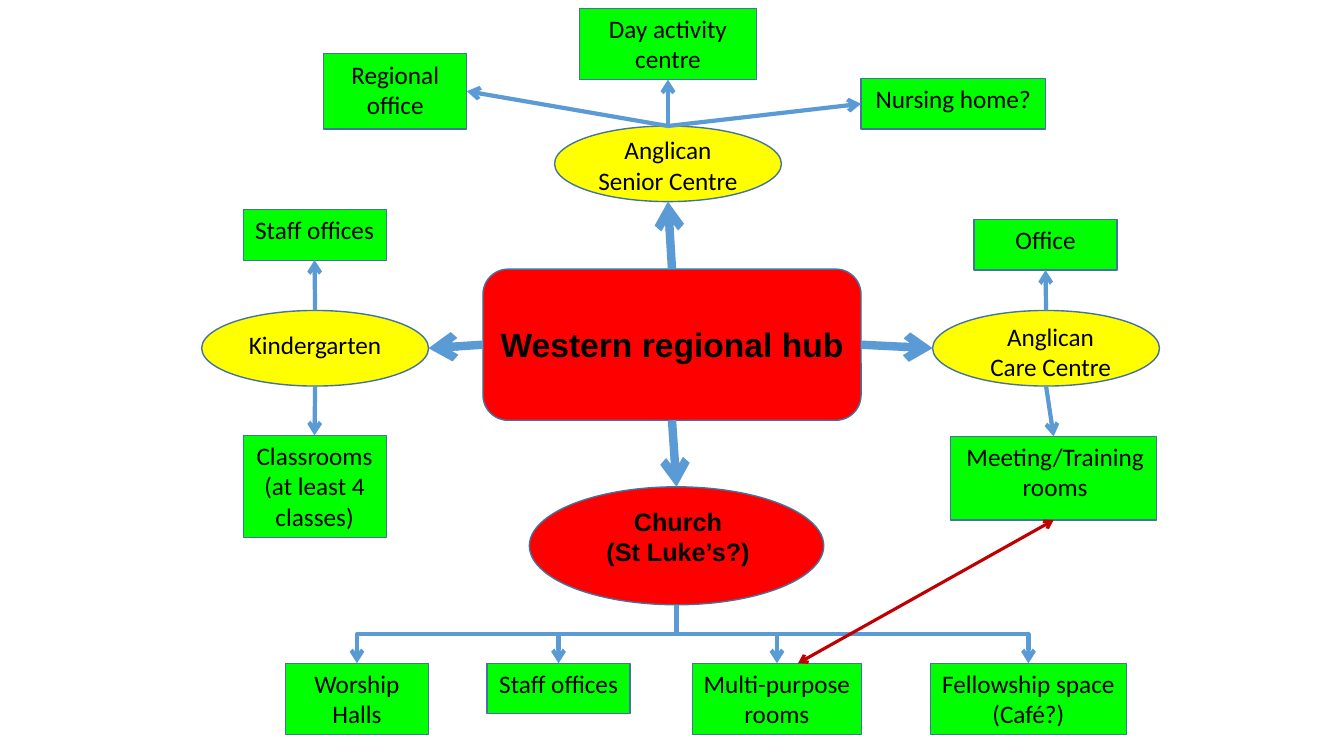
from lxml import etree
from pptx import Presentation
from pptx.dml.color import RGBColor
from pptx.enum.shapes import MSO_CONNECTOR as CONNECTOR, MSO_SHAPE as SHAPE
from pptx.enum.text import MSO_ANCHOR as ANCHOR, PP_ALIGN as ALIGN
from pptx.oxml.ns import qn
from pptx.util import Inches, Pt

RED, YELLOW, GREEN = "FF0000", "FFFF00", "00FF00"
OUTLINE, BLUE, DARK_RED = "43739E", "5B9BD5", "C00000"
TOP, LEFT, BOTTOM, RIGHT = range(4)


def color(value):
    return RGBColor.from_string(value)


def side_point(shape, side):
    horizontal = {LEFT: 0, RIGHT: 1}.get(side, 0.5)
    vertical = {TOP: 0, BOTTOM: 1}.get(side, 0.5)
    return (int(shape.left + shape.width * horizontal),
            int(shape.top + shape.height * vertical))


presentation = Presentation()
presentation.slide_width = Inches(13.33)
presentation.slide_height = Inches(7.5)
slide = presentation.slides.add_slide(presentation.slide_layouts[5])

nodes = [
    ("hub", SHAPE.ROUNDED_RECTANGLE, RED, 4.79, 2.67, 3.75, 1.5, 1, ""),
    ("church", SHAPE.OVAL, RED, 5.25, 4.83, 2.92, 1.17, 1, "Church\n(St Luke’s?)"),
    ("senior", SHAPE.OVAL, YELLOW, 5.5, 1.25, 2.25, 0.75, 1, "Anglican Senior Centre"),
    ("kindergarten", SHAPE.OVAL, YELLOW, 2, 3.08, 2.25, 0.75, 1, "Kindergarten"),
    ("care", SHAPE.OVAL, YELLOW, 9.25, 3.08, 2.25, 0.75, 1, "Anglican Care Centre"),
    ("worship", SHAPE.RECTANGLE, GREEN, 2.83, 6.58, 1.42, 0.71, 0.5, "Worship Halls"),
    ("church staff", SHAPE.RECTANGLE, GREEN, 4.83, 6.58, 1.42, 0.5, 1, "Staff offices"),
    ("multi-purpose", SHAPE.RECTANGLE, GREEN, 6.87, 6.58, 1.67, 0.71, 0.5, "Multi-purpose rooms"),
    ("fellowship", SHAPE.RECTANGLE, GREEN, 9.23, 6.58, 1.94, 0.71, 0.5, "Fellowship space\n(Café?)"),
    ("classrooms", SHAPE.RECTANGLE, GREEN, 2.41, 4.32, 1.42, 1.01, 0.5, "Classrooms\n(at least 4 classes)"),
    ("kindergarten staff", SHAPE.RECTANGLE, GREEN, 2.41, 2.08, 1.42, 0.5, 0.5, "Staff offices"),
    ("day", SHAPE.RECTANGLE, GREEN, 5.75, 0.08, 1.75, 0.71, 0.5, "Day activity centre"),
    ("regional", SHAPE.RECTANGLE, GREEN, 3.21, 0.53, 1.42, 0.75, 1, "Regional office"),
    ("nursing", SHAPE.RECTANGLE, GREEN, 8.54, 0.78, 1.83, 0.5, 1, "Nursing home?"),
    ("office", SHAPE.RECTANGLE, GREEN, 9.66, 2.18, 1.42, 0.5, 1, "Office"),
    ("meeting", SHAPE.RECTANGLE, GREEN, 9.43, 4.33, 2.04, 0.83, 1, "Meeting/Training rooms"),
]

margins = {
    "church": (0.03, 0, 0, 0.18),
    "senior": (0.08, 0.02, 0.08, 0),
    "kindergarten": (0.08, 0, 0.08, 0.08),
    "care": (0.23, 0.06, 0.14, 0),
    "regional": (0.1, 0.06, 0.1, 0.05),
    "meeting": (0.12, 0.05, 0.09, 0.05),
}

shapes = {}
for name, kind, fill, left, top, width, height, line_width, text in nodes:
    shape = slide.shapes.add_shape(kind, Inches(left), Inches(top), Inches(width), Inches(height))
    shape.shadow.inherit = False
    shape.fill.solid()
    shape.fill.fore_color.rgb = color(fill)
    shape.line.color.rgb = color(OUTLINE)
    shape.line.width = Pt(line_width)
    shapes[name] = shape
    if not text:
        continue
    frame = shape.text_frame
    frame.word_wrap = True
    frame.text = text
    frame.vertical_anchor = ANCHOR.MIDDLE if kind == SHAPE.OVAL else ANCHOR.TOP
    frame.margin_left, frame.margin_top, frame.margin_right, frame.margin_bottom = map(
        Inches, margins.get(name, (0.1, 0.05, 0.1, 0.05)))
    for paragraph in frame.paragraphs:
        paragraph.alignment = ALIGN.CENTER
        paragraph.font.size = Pt(18)
        paragraph.font.name = "Arial" if fill == RED else "Calibri"
        paragraph.font.bold = fill == RED
        paragraph.font.color.rgb = color("000000")

title = slide.shapes.title
title.left, title.top, title.width, title.height = map(Inches, (4.79, 3.16, 3.75, 0.5))
title.text_frame.text = "Western regional hub"
title.text_frame.vertical_anchor = ANCHOR.MIDDLE
heading = title.text_frame.paragraphs[0]
heading.alignment = ALIGN.CENTER
heading.font.name = "Arial"
heading.font.size = Pt(24)
heading.font.bold = True
heading.font.color.rgb = color("000000")
shapes["hub"]._element.addnext(title._element)

links = [
    ("hub", BOTTOM, "church", TOP, 6),
    ("hub", LEFT, "kindergarten", RIGHT, 6),
    ("hub", TOP, "senior", BOTTOM, 6),
    ("hub", RIGHT, "care", LEFT, 6),
    ("church", BOTTOM, "worship", TOP, 3),
    ("church", BOTTOM, "church staff", TOP, 3),
    ("church", BOTTOM, "multi-purpose", TOP, 3),
    ("church", BOTTOM, "fellowship", TOP, 3),
    ("kindergarten", BOTTOM, "classrooms", TOP, 3),
    ("kindergarten", TOP, "kindergarten staff", BOTTOM, 3),
    ("senior", TOP, "regional", RIGHT, 3),
    ("senior", TOP, "day", BOTTOM, 3),
    ("senior", TOP, "nursing", LEFT, 3),
    ("care", TOP, "office", BOTTOM, 3),
    ("care", BOTTOM, "meeting", TOP, 3),
    ("meeting", BOTTOM, "multi-purpose", TOP, 2.25),
]

for begin_name, begin_side, end_name, end_side, line_width in links:
    begin, end = shapes[begin_name], shapes[end_name]
    begin_x, begin_y = side_point(begin, begin_side)
    end_x, end_y = side_point(end, end_side)
    elbow = begin_name == "church"
    two_way = begin_name == "meeting"
    if two_way:
        end_x += Inches(0.21)
    connector = slide.shapes.add_connector(
        CONNECTOR.ELBOW if elbow else CONNECTOR.STRAIGHT, begin_x, begin_y, end_x, end_y)
    if elbow:
        drop, span = end_y - begin_y, abs(end_x - begin_x)
        connector.left = (begin_x + end_x - drop) // 2
        connector.top = (begin_y + end_y - span) // 2
        connector.width, connector.height = drop, span
        frame = connector._element.spPr.find(qn("a:xfrm"))
        frame.set("rot", str((90 if end_x < begin_x else 270) * 60000))
        frame.set("flipH", "0" if end_x < begin_x else "1")
    else:
        if begin.auto_shape_type != SHAPE.OVAL or begin_side == TOP:
            connector.begin_connect(begin, begin_side)
        if not two_way and (end.auto_shape_type != SHAPE.OVAL or end_side == TOP):
            connector.end_connect(end, end_side)
    connector.line.color.rgb = color(DARK_RED if two_way else BLUE)
    connector.line.width = Pt(line_width)
    line = connector.line._get_or_add_ln()
    for tag in ["a:headEnd", "a:tailEnd"] if two_way else ["a:tailEnd"]:
        etree.SubElement(line, qn(tag), type="arrow")
    etree.SubElement(connector._element.spPr, qn("a:effectLst"))

presentation.save("out.pptx")
